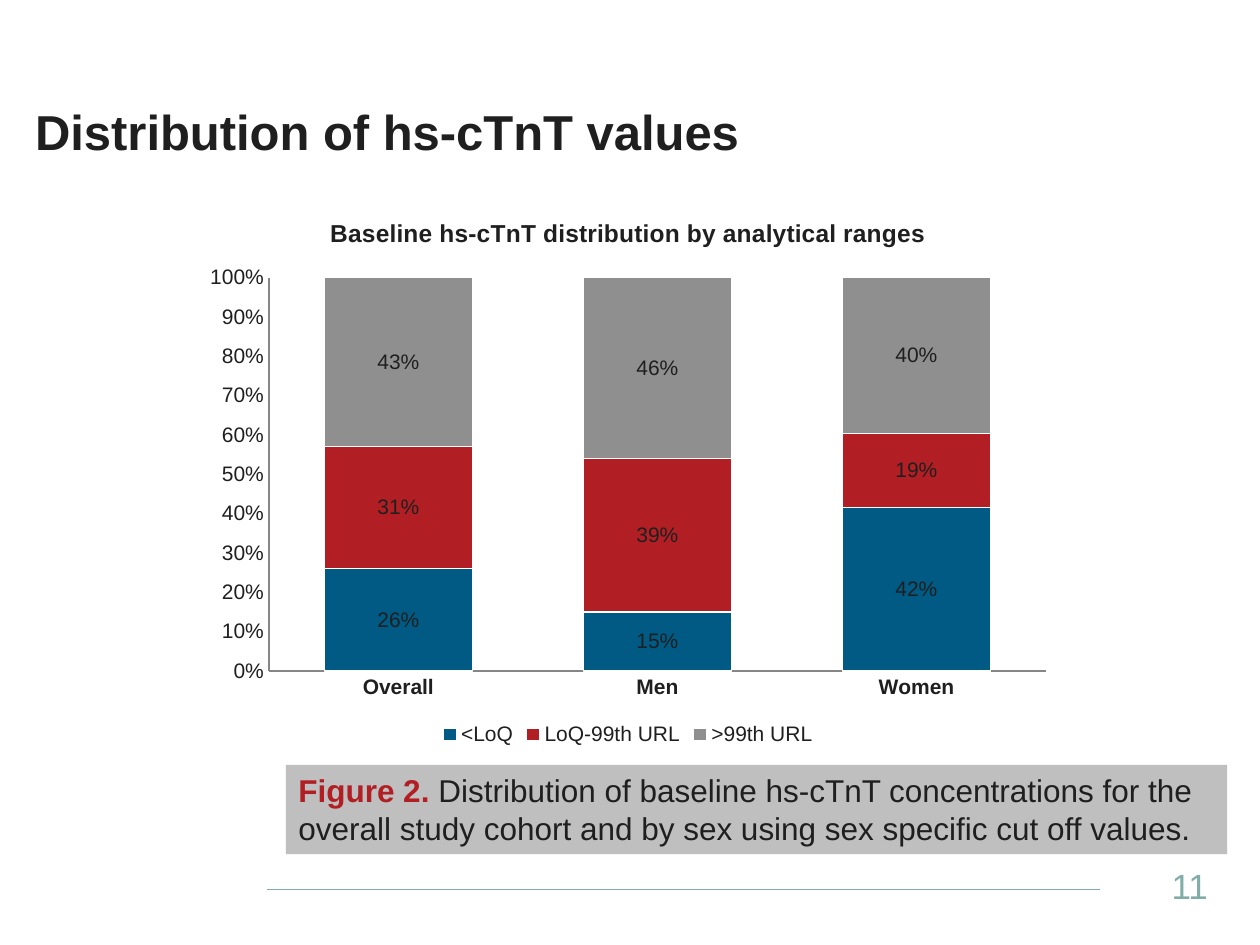
from pptx import Presentation
from pptx import util as u
from pptx.chart.data import CategoryChartData
from pptx.dml.color import RGBColor
from pptx.enum import chart as ch
from pptx.enum import shapes, text
from pptx.oxml.ns import qn
from lxml import etree

COLORS = {
    "ink": "1F1F1F",
    "teal": "81ADA8",
    "blue": "005A84",
    "red": "B11F24",
    "gray": "8F8F8F",
    "panel": "BFBFBF",
    "axis": "868686",
    "white": "FFFFFF",
}


class SlideBuilder:
    font_name = "Arial"

    def __init__(self, slide):
        self.slide = slide

    def color(self, name):
        return RGBColor.from_string(COLORS[name])

    def box(self, at):
        return [u.Inches(v) for v in at]

    def style(self, font, size, color="ink", bold=False):
        font.name = self.font_name
        font.size = u.Pt(size)
        font.bold = bold
        font.color.rgb = self.color(color)

    def add_runs(self, tf, runs, size, anchor=text.MSO_ANCHOR.TOP, wrap=True):
        tf.word_wrap = wrap
        tf.vertical_anchor = anchor
        p = tf.paragraphs[0]
        p.alignment = text.PP_ALIGN.LEFT
        for words, color, bold in runs:
            r = p.add_run()
            r.text = words
            self.style(r.font, size, color, bold)

    def text_box(self, at, runs, size, **options):
        sp = self.slide.shapes.add_textbox(*self.box(at))
        self.add_runs(sp.text_frame, runs, size, **options)

    def panel(self, at, fill, runs, size):
        sp = self.slide.shapes.add_shape(shapes.MSO_SHAPE.RECTANGLE, *self.box(at))
        sp.shadow.inherit = False
        sp.fill.solid()
        sp.fill.fore_color.rgb = self.color(fill)
        sp.line.fill.background()
        self.add_runs(sp.text_frame, runs, size)

    def line(self, ends, color, width):
        cx = self.slide.shapes.add_connector(
            shapes.MSO_CONNECTOR.STRAIGHT, *self.box(ends))
        cx.line.color.rgb = self.color(color)
        cx.line.width = u.Pt(width)
        etree.SubElement(cx._element.spPr, qn("a:effectLst"))

    def stacked_chart(self, at, title, categories, series):
        data = CategoryChartData(number_format="0%")
        data.categories = categories
        for name, _, values in series:
            data.add_series(name, values)
        chart = self.slide.shapes.add_chart(
            ch.XL_CHART_TYPE.COLUMN_STACKED_100, *self.box(at), data).chart
        self.style(chart.font, 12)

        chart.has_title = True
        r = chart.chart_title.text_frame.paragraphs[0].add_run()
        r.text = title
        self.style(r.font, 14, bold=True)
        chart.chart_title.include_in_layout = False

        chart.has_legend = True
        chart.legend.position = ch.XL_LEGEND_POSITION.BOTTOM
        chart.legend.include_in_layout = False
        self.style(chart.legend.font, 12)

        for axis, bold in ((chart.category_axis, True), (chart.value_axis, False)):
            axis.has_major_gridlines = False
            axis.major_tick_mark = ch.XL_TICK_MARK.NONE
            axis.minor_tick_mark = ch.XL_TICK_MARK.NONE
            axis.format.line.color.rgb = self.color("axis")
            self.style(axis.tick_labels.font, 12, bold=bold)
        value_axis = chart.value_axis
        value_axis.minimum_scale, value_axis.maximum_scale = 0, 1
        value_axis.major_unit = 0.1
        value_axis.tick_labels.number_format = "0%"
        value_axis.tick_labels.number_format_is_linked = False

        plot = chart.plots[0]
        plot.gap_width, plot.overlap = 75, 100
        plot.vary_by_categories = False
        for s, (_, color, _) in zip(plot.series, series):
            s.format.fill.solid()
            s.format.fill.fore_color.rgb = self.color(color)
            s.format.line.color.rgb = self.color("white")
            s.format.line.width = u.Pt(0.75)
            labels = s.data_labels
            labels.show_value = True
            labels.number_format = "0%"
            labels.number_format_is_linked = False
            labels.position = ch.XL_LABEL_POSITION.CENTER
            self.style(labels.font, 12)


def main():
    prs = Presentation()
    prs.slide_width, prs.slide_height = u.Inches(10), u.Inches(7.5)
    s = SlideBuilder(prs.slides.add_slide(prs.slide_layouts[6]))

    s.line((2.12, 7.06, 8.73, 7.06), "teal", 0.5)
    s.text_box((9.2, 6.83, 0.8, 0.4), [("11", "teal", False)], 20,
               anchor=text.MSO_ANCHOR.MIDDLE)
    s.text_box((0.18, 0.76, 5.97, 0.57),
               [("Distribution of hs-cTnT values", "ink", True)], 28, wrap=False)
    s.panel((2.27, 6.07, 7.47, 0.71), "panel", [
        ("Figure 2. ", "red", True),
        ("Distribution of baseline hs-cTnT concentrations for the overall study "
         "cohort and by sex using sex specific cut off values.", "ink", False),
    ], 18)
    s.stacked_chart(
        (1.53, 1.55, 6.91, 4.41),
        "Baseline hs-cTnT distribution by analytical ranges",
        ["Overall", "Men", "Women"],
        [
            ("<LoQ", "blue", (0.26, 0.15, 0.42)),
            ("LoQ-99th URL", "red", (0.31, 0.39, 0.19)),
            (">99th URL", "gray", (0.43, 0.46, 0.4)),
        ],
    )
    prs.save("out.pptx")


if __name__ == "__main__":
    main()
